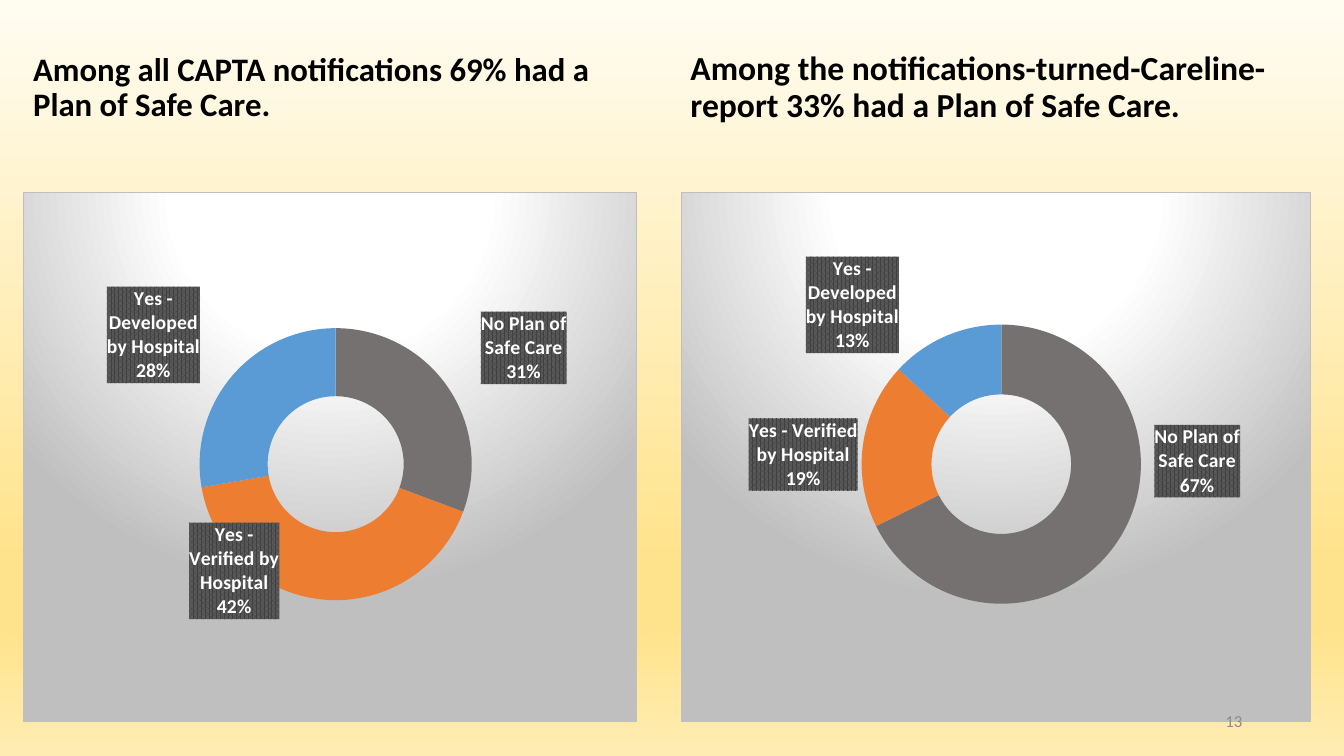
from dataclasses import dataclass

from lxml.etree import _Element
from pptx import Presentation
from pptx.chart.chart import Chart
from pptx.chart.data import CategoryChartData
from pptx.dml.color import RGBColor
from pptx.enum.chart import XL_CHART_TYPE
from pptx.enum.text import MSO_ANCHOR, PP_ALIGN
from pptx.oxml import parse_xml
from pptx.oxml.ns import nsdecls, qn
from pptx.slide import Slide
from pptx.util import Inches, Pt

FONT = "Calibri"
PANEL_TOP, PANEL_HEIGHT = 1.9, 5.26
TITLE_TOP, TITLE_HEIGHT = 0.2, 1.35
PLOT_LAYOUT = {"x": 0.287, "y": 0.071, "w": 0.444, "h": 0.887}


@dataclass(frozen=True)
class Answer:
    name: str
    color: str
    label_shift: tuple[float, float]  # fraction of the chart's width and height


@dataclass(frozen=True)
class Panel:
    title: str
    title_size: float
    left: float
    width: float
    values: tuple[int, ...]


ANSWERS = (
    Answer("No Plan of Safe Care", "767171", (0.17, -0.11)),
    Answer("Yes - Verified by Hospital", "ED7D31", (-0.15, 0.01)),
    Answer("Yes - Developed by Hospital", "5B9BD5", (-0.17, -0.12)),
)
PANELS = (
    Panel("Among all CAPTA notifications 69% had a Plan of Safe Care.",
          23.4, 0.23, 6.09, (31, 42, 28)),
    Panel("Among the notifications-turned-Careline-report 33% had a Plan of Safe Care.",
          24, 6.75, 6.25, (67, 19, 13)),
)


def rgb(color: str) -> RGBColor:
    return RGBColor.from_string(color)


def solid(color: str) -> str:
    return f'<a:solidFill><a:srgbClr val="{color}"/></a:solidFill>'


def gradient(stops: dict[int, str], direction: str) -> str:
    """Return gradient fill XML; stops map percent to colour."""
    stop_list = "".join(
        f'<a:gs pos="{percent * 1000}"><a:srgbClr val="{color}"/></a:gs>'
        for percent, color in stops.items())
    return f'<a:gradFill rotWithShape="1"><a:gsLst>{stop_list}</a:gsLst>{direction}</a:gradFill>'


def paint_background(slide: Slide) -> None:
    fill = gradient({0: "FFFCF2", 74: "FFE38C", 83: "FFE38C", 100: "FFECB2"},
                    '<a:lin ang="5400000" scaled="1"/>')
    background = parse_xml(
        f'<p:bg {nsdecls("p", "a")}><p:bgPr>{fill}<a:effectLst/></p:bgPr></p:bg>')
    slide.element.find(qn("p:cSld")).insert(0, background)


def add_text(slide: Slide, text: str, left: float, top: float, width: float, height: float,
             *, size: float, color: str = "000000", bold: bool = False,
             align: PP_ALIGN = PP_ALIGN.LEFT, line_spacing: float = 1.0) -> None:
    shape = slide.shapes.add_textbox(Inches(left), Inches(top), Inches(width), Inches(height))
    frame = shape.text_frame
    frame.word_wrap = True
    frame.vertical_anchor = MSO_ANCHOR.MIDDLE
    paragraph = frame.paragraphs[0]
    paragraph.alignment = align
    paragraph.line_spacing = line_spacing
    run = paragraph.add_run()
    run.text = text
    run.font.name = FONT
    run.font.size = Pt(size)
    run.font.bold = bold
    run.font.color.rgb = rgb(color)


def label_format() -> str:
    """Return the XML for the look and content of a data label."""
    return (
        '<c:numFmt formatCode="0&quot;%&quot;" sourceLinked="0"/>'
        '<c:spPr><a:pattFill prst="pct75"><a:fgClr><a:srgbClr val="404040"/></a:fgClr>'
        '<a:bgClr><a:srgbClr val="595959"/></a:bgClr></a:pattFill><a:ln><a:noFill/></a:ln></c:spPr>'
        '<c:txPr><a:bodyPr/><a:lstStyle/><a:p><a:pPr><a:defRPr sz="1400" b="1">'
        f'{solid("FFFFFF")}<a:latin typeface="{FONT}"/></a:defRPr></a:pPr>'
        '<a:endParaRPr lang="en-US"/></a:p></c:txPr>'
        '<c:showLegendKey val="0"/><c:showVal val="1"/><c:showCatName val="1"/>'
        '<c:showSerName val="0"/><c:showPercent val="0"/><c:showBubbleSize val="0"/>'
        '<c:separator>\n</c:separator>')


def data_labels() -> _Element:
    point_labels = "".join(
        f'<c:dLbl><c:idx val="{index}"/><c:layout><c:manualLayout>'
        f'<c:x val="{answer.label_shift[0]}"/><c:y val="{answer.label_shift[1]}"/>'
        f'</c:manualLayout></c:layout>{label_format()}</c:dLbl>'
        for index, answer in enumerate(ANSWERS))
    return parse_xml(f'<c:dLbls {nsdecls("c", "a")}>{point_labels}{label_format()}'
                     '<c:showLeaderLines val="0"/></c:dLbls>')


def style_chart_area(chart: Chart) -> None:
    fill = gradient({0: "FFFFFF", 39: "FFFFFF", 100: "BFBFBF"},
                    '<a:path path="circle"><a:fillToRect l="50000" t="-80000" '
                    'r="50000" b="180000"/></a:path><a:tileRect/>')
    chart.element.find(qn("c:chart")).addnext(parse_xml(
        f'<c:spPr {nsdecls("c", "a")}>{fill}<a:ln w="9525">{solid("BFBFBF")}</a:ln></c:spPr>'))


def place_plot(chart: Chart) -> None:
    plot_area = chart.element.find(f'{qn("c:chart")}/{qn("c:plotArea")}')
    for layout in plot_area.findall(qn("c:layout")):
        plot_area.remove(layout)
    lengths = "".join(f'<c:{key} val="{value}"/>' for key, value in PLOT_LAYOUT.items())
    plot_area.insert(0, parse_xml(
        f'<c:layout {nsdecls("c")}><c:manualLayout><c:layoutTarget val="inner"/>'
        f'<c:xMode val="edge"/><c:yMode val="edge"/>{lengths}</c:manualLayout></c:layout>'))


def add_doughnut(slide: Slide, panel: Panel) -> None:
    chart_data = CategoryChartData()
    chart_data.categories = [answer.name for answer in ANSWERS]
    chart_data.add_series("Series 1", panel.values)
    chart = slide.shapes.add_chart(
        XL_CHART_TYPE.DOUGHNUT, Inches(panel.left), Inches(PANEL_TOP),
        Inches(panel.width), Inches(PANEL_HEIGHT), chart_data).chart
    chart.has_title = False
    chart.has_legend = False
    chart.font.name = FONT
    chart.font.size = Pt(10)
    chart.font.color.rgb = rgb("000000")
    plot = chart.plots[0]
    plot.vary_by_categories = True
    series = plot.series[0]
    for index, answer in enumerate(ANSWERS):
        point_format = series.points[index].format
        point_format.fill.solid()
        point_format.fill.fore_color.rgb = rgb(answer.color)
        point_format.line.fill.background()
    series_element = series._element
    for labels in series_element.findall(qn("c:dLbls")):
        series_element.remove(labels)
    series_element.find(qn("c:cat")).addprevious(data_labels())
    style_chart_area(chart)
    place_plot(chart)


def main() -> None:
    presentation = Presentation()
    presentation.slide_width = Inches(13.33)
    presentation.slide_height = Inches(7.5)
    slide = presentation.slides.add_slide(presentation.slide_layouts[6])
    paint_background(slide)
    for panel in PANELS:
        add_text(slide, panel.title, panel.left, TITLE_TOP, panel.width, TITLE_HEIGHT,
                 size=panel.title_size, bold=True, line_spacing=0.9)
        add_doughnut(slide, panel)
    add_text(slide, "13", 9.42, 6.95, 3, 0.4, size=12, color="8C8C8C", align=PP_ALIGN.RIGHT)
    presentation.save("out.pptx")


if __name__ == "__main__":
    main()
